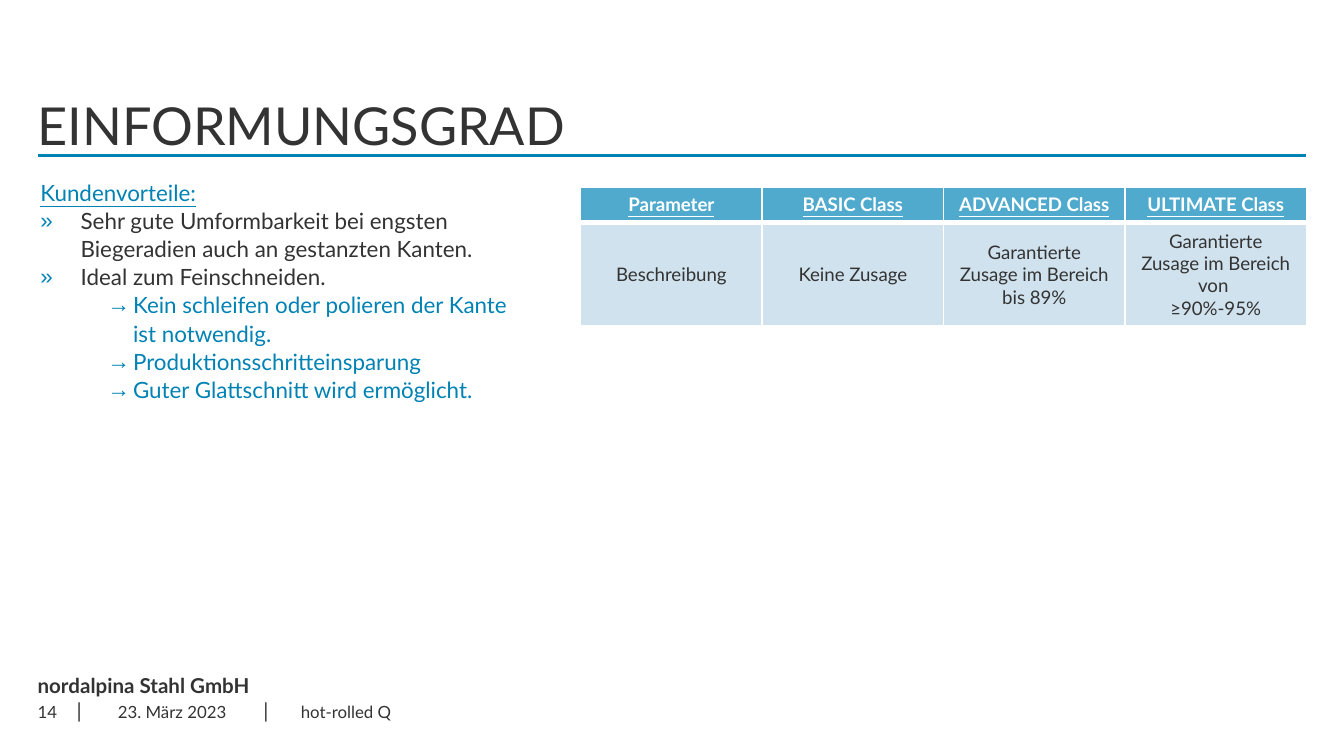
"""Builds the EINFORMUNGSGRAD slide with customer benefits and a class table."""
from dataclasses import dataclass

from lxml.etree import SubElement
from pptx import Presentation
from pptx.dml.color import RGBColor
from pptx.enum.shapes import MSO_CONNECTOR
from pptx.enum.text import MSO_ANCHOR, MSO_AUTO_SIZE, PP_ALIGN
from pptx.oxml import parse_xml
from pptx.oxml.ns import nsdecls, qn
from pptx.util import Inches, Pt

FONT = "Lato"
BULLET_FONT = "Arial"
DARK = RGBColor(0x33, 0x33, 0x33)
BLUE = RGBColor(0x00, 0x82, 0xB4)
HEADER_BLUE = RGBColor(0x50, 0xAA, 0xCD)
PALE_BLUE = RGBColor(0xD0, 0xE2, 0xED)
WHITE = RGBColor(0xFF, 0xFF, 0xFF)
PAGE_WIDTH = 10
PAGE_HEIGHT = PAGE_WIDTH * 9 / 16
LEFT = 0.28
RIGHT = PAGE_WIDTH - LEFT


@dataclass(frozen=True)
class Label:
    text: str
    left: float
    top: float
    width: float
    height: float
    size: float
    bold: bool = False
    inset: float = 0
    anchor: MSO_ANCHOR = MSO_ANCHOR.TOP
    align: PP_ALIGN = PP_ALIGN.LEFT


@dataclass(frozen=True)
class Benefit:
    text: str
    color: RGBColor = DARK
    bullet: str = ""
    level: int = 0
    indent: float = 0
    hanging: float = 0
    spacing: float = 1.05
    underline: bool = False


LABELS = [
    Label("nordalpina Stahl GmbH", LEFT, 5.01, 6.44, 0.19, 11, bold=True),
    Label("|", 0.57, 5.19, 0.22, 0.19, 11),
    Label("|", 1.96, 5.19, 0.22, 0.19, 11),
    Label("14", LEFT, 5.15, 0.31, 0.3, 9, anchor=MSO_ANCHOR.MIDDLE),
    Label("23. März 2023", 0.59, 5.15, 1.38, 0.3, 9, inset=0.1,
          anchor=MSO_ANCHOR.MIDDLE, align=PP_ALIGN.CENTER),
    Label("hot-rolled Q", 2.14, 5.15, 4.56, 0.3, 9, inset=0.1, anchor=MSO_ANCHOR.MIDDLE),
]


def point(text: str) -> Benefit:
    return Benefit(text, DARK, "»", 0, 0.3, 0.3)


def result(text: str) -> Benefit:
    return Benefit(text, BLUE, "→", 1, 0.69, 0.19)


BENEFITS = [
    Benefit("Kundenvorteile:", BLUE, spacing=1.0, underline=True),
    point("Sehr gute Umformbarkeit bei engsten Biegeradien auch an gestanzten Kanten."),
    point("Ideal zum Feinschneiden."),
    result("Kein schleifen oder polieren der Kante ist notwendig."),
    result("Produktionsschritteinsparung"),
    result("Guter Glattschnitt wird ermöglicht."),
]

ROWS = [
    ["Parameter", "BASIC Class", "ADVANCED Class", "ULTIMATE Class"],
    ["Beschreibung", "Keine Zusage", "Garantierte Zusage im Bereich bis 89%",
     "Garantierte Zusage im Bereich von \n≥90%-95%"],
]
ROW_HEIGHTS = [0.25, 0.77]
COLUMN_WIDTH = 1.35


def style_runs(para, size: float, color: RGBColor, bold: bool = False,
               underline: bool = False) -> None:
    for span in para.runs:
        span.font.name = FONT
        span.font.size = Pt(size)
        span.font.color.rgb = color
        span.font.bold = bold
        span.font.underline = underline


def place(box, left: float, top: float, width: float, height: float) -> None:
    box.left, box.top = Inches(left), Inches(top)
    box.width, box.height = Inches(width), Inches(height)


def set_insets(frame, horizontal: float, vertical: float) -> None:
    frame.margin_left = frame.margin_right = Inches(horizontal)
    frame.margin_top = frame.margin_bottom = Inches(vertical)


def add_label(slide, label: Label) -> None:
    box = slide.shapes.add_textbox(Inches(label.left), Inches(label.top),
                                   Inches(label.width), Inches(label.height))
    frame = box.text_frame
    frame.word_wrap = True
    frame.vertical_anchor = label.anchor
    set_insets(frame, label.inset, label.inset / 2)
    frame.text = label.text
    para = frame.paragraphs[0]
    para.alignment = label.align
    style_runs(para, label.size, DARK, label.bold)


def fill_title(title, text: str) -> None:
    place(title, LEFT, 0.19, RIGHT - LEFT, 0.97)
    frame = title.text_frame
    frame.auto_size = MSO_AUTO_SIZE.NONE
    frame.vertical_anchor = MSO_ANCHOR.BOTTOM
    set_insets(frame, 0, 0)
    frame.text = text
    para = frame.paragraphs[0]
    para.alignment = PP_ALIGN.LEFT
    para.line_spacing = Pt(32)
    style_runs(para, 28, DARK)


def add_rule(slide) -> None:
    rule = slide.shapes.add_connector(MSO_CONNECTOR.STRAIGHT, Inches(LEFT), Inches(1.16),
                                      Inches(RIGHT), Inches(1.16))
    rule.line.color.rgb = BLUE
    rule.line.width = Pt(1.5)
    SubElement(rule.element.spPr, qn("a:effectLst"))


def set_bullet(para, benefit: Benefit) -> None:
    properties = para._p.get_or_add_pPr()
    properties.set("marL", str(Inches(benefit.indent)))
    properties.set("indent", str(-Inches(benefit.hanging)))
    if benefit.bullet:
        color = SubElement(properties, qn("a:buClr"))
        SubElement(color, qn("a:srgbClr"), val=str(BLUE))
        SubElement(properties, qn("a:buFont"), typeface=BULLET_FONT)
        SubElement(properties, qn("a:buChar"), char=benefit.bullet)
    else:
        SubElement(properties, qn("a:buNone"))


def fill_benefits(body, benefits: list[Benefit]) -> None:
    place(body, 0.2, 1.28, 3.87, 1.77)
    frame = body.text_frame
    frame.auto_size = MSO_AUTO_SIZE.NONE
    set_insets(frame, 0.1, 0.05)
    frame.text = "\n".join(benefit.text for benefit in benefits)
    for para, benefit in zip(frame.paragraphs, benefits):
        set_bullet(para, benefit)
        para.level = benefit.level
        para.alignment = PP_ALIGN.LEFT
        para.line_spacing = benefit.spacing
        para.space_before = Pt(0)
        style_runs(para, 12, benefit.color, underline=benefit.underline)


def set_borders(cell, widths: dict[str, float]) -> None:
    properties = cell._tc.get_or_add_tcPr()
    for index, (side, width) in enumerate(widths.items()):
        properties.insert(index, parse_xml(
            f'<a:{side} {nsdecls("a")} w="{Pt(width)}"><a:solidFill>'
            f'<a:srgbClr val="{WHITE}"/></a:solidFill></a:{side}>'))


def fill_cell(cell, text: str, header: bool) -> None:
    cell.fill.solid()
    cell.fill.fore_color.rgb = HEADER_BLUE if header else PALE_BLUE
    cell.vertical_anchor = MSO_ANCHOR.TOP if header else MSO_ANCHOR.MIDDLE
    set_borders(cell, {"lnL": 1, "lnR": 1, "lnT": 1 if header else 3, "lnB": 3 if header else 1})
    cell.text_frame.text = text
    for para in cell.text_frame.paragraphs:
        para.alignment = PP_ALIGN.CENTER
        style_runs(para, 10, WHITE if header else DARK, bold=header, underline=header)


def add_class_table(slide) -> None:
    columns = len(ROWS[0])
    table = slide.shapes.add_table(len(ROWS), columns, Inches(4.32), Inches(1.39),
                                   Inches(COLUMN_WIDTH * columns),
                                   Inches(sum(ROW_HEIGHTS))).table
    for row, height in zip(table.rows, ROW_HEIGHTS):
        row.height = Inches(height)
    for row_index, texts in enumerate(ROWS):
        for column_index, text in enumerate(texts):
            fill_cell(table.cell(row_index, column_index), text, row_index == 0)


def main() -> None:
    deck = Presentation()
    deck.slide_width, deck.slide_height = Inches(PAGE_WIDTH), Inches(PAGE_HEIGHT)
    page = deck.slides.add_slide(deck.slide_layouts[1])
    fill_title(page.shapes.title, "EINFORMUNGSGRAD")
    fill_benefits(page.placeholders[1], BENEFITS)
    add_rule(page)
    for label in LABELS:
        add_label(page, label)
    add_class_table(page)
    deck.save("out.pptx")


if __name__ == "__main__":
    main()
